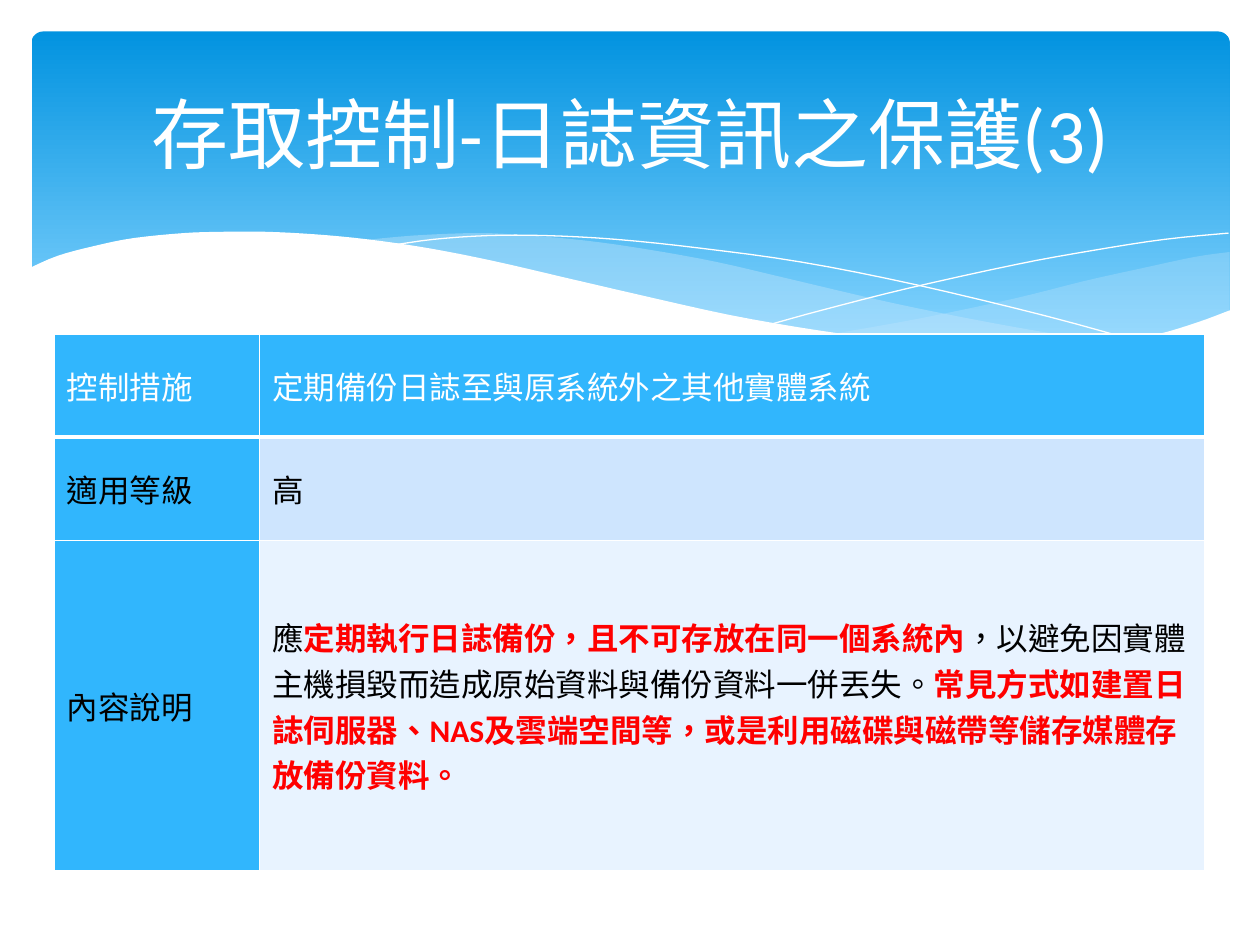
from pptx import Presentation
from pptx.dml.color import RGBColor
from pptx.enum.shapes import MSO_SHAPE as SHAPE
from pptx.enum.text import MSO_ANCHOR as ANCHOR, PP_ALIGN as ALIGN
from pptx.oxml import parse_xml
from pptx.oxml.ns import nsdecls
from pptx.util import Inches, Pt
from lxml import etree

FONT = "Calibri"
WHITE, BLACK, RED = "FFFFFF", "000000", "FF0000"
ACCENT, PALE, PALER, MIST = "31B6FD", "CEE5FE", "E8F3FF", "C6E7FC"

# Content: a cell is a list of (text, colour, bold) runs
TITLE = "存取控制-日誌資訊之保護(3)"
ROWS = [
    ([("控制措施", WHITE, False)],
     [("定期備份日誌至與原系統外之其他實體系統", WHITE, False)]),
    ([("適用等級", BLACK, False)], [("高", BLACK, False)]),
    ([("內容說明", BLACK, False)],
     [("應", BLACK, False),
      ("定期執行日誌備份，且不可存放在同一個系統內", RED, True),
      ("，以避免因實體主機損毀而造成原始資料與備份資料一併丟失。", BLACK, False),
      ("常見方式如建置日誌伺服器、NAS及雲端空間等，或是利用磁碟與磁帶等儲存媒體存放備份資料。",
       RED, True)]),
]
COL_WIDTHS = [1.63, 7.5]
ROW_HEIGHTS = [0.82, 0.82, 2.62]
ROW_FILLS = [ACCENT, PALE, PALER]

# Waves: (fill, opacity %, curves); the curves are joined by straight lines
WAVES = [
    (MIST, 29, [
        [(9.76, 2), (9.48, 2.04), (9.06, 2.13), (8.61, 2.23), (8.05, 2.37),
         (7.29, 2.53), (6.61, 2.65)],
        [(6.61, 2.65), (7.05, 2.71), (7.57, 2.76), (8.03, 2.78), (8.44, 2.77),
         (8.81, 2.73), (9.13, 2.67), (9.42, 2.59), (9.76, 2.47)]]),
    (MIST, 40, [
        [(8.93, 2.73), (8.37, 2.65), (7.75, 2.54), (7.06, 2.4), (6.29, 2.22),
         (5.69, 2.08), (5.14, 1.98), (4.65, 1.91), (4.2, 1.87), (3.8, 1.85),
         (3.28, 1.87), (2.86, 1.91)],
        [(2.86, 1.91), (3.42, 1.99), (4.04, 2.11), (4.49, 2.22), (5.3, 2.4),
         (6.01, 2.55), (6.65, 2.66), (7.22, 2.74), (7.73, 2.77), (8.18, 2.78),
         (8.57, 2.77), (8.93, 2.73)]]),
    (None, 100, [
        [(3.09, 1.95), (3.44, 1.9), (3.87, 1.87), (4.33, 1.87), (4.89, 1.9),
         (5.56, 1.97), (6.36, 2.08), (7.27, 2.26), (8.31, 2.51), (9.07, 2.72)]]),
    (None, 100, [
        [(6.13, 2.57), (6.53, 2.46), (7.2, 2.29), (8.06, 2.1), (8.66, 1.99),
         (9.24, 1.9), (9.75, 1.85)]]),
    (WHITE, 100, [
        [(9.77, 2.46), (9.5, 2.56), (9.2, 2.65), (8.87, 2.71), (8.5, 2.75),
         (8.09, 2.77), (7.61, 2.75), (7.08, 2.7), (6.48, 2.62), (5.79, 2.5),
         (5.03, 2.33), (4.47, 2.2), (3.91, 2.07), (3.4, 1.97), (2.92, 1.9),
         (2.5, 1.86), (2.11, 1.84), (1.77, 1.84), (1.46, 1.85), (1.06, 1.89),
         (0.76, 1.95), (0.46, 2.03), (0.23, 2.13)],
        [(0.23, 3.29), (9.77, 3.29)]]),
]


def rgb(color):
    return RGBColor.from_string(color)


def smooth(points, steps=4):
    """Catmull-Rom curve through the points."""
    padded = [points[0], *points, points[-1]]
    curve = [points[0]]
    for a, b, c, d in zip(padded, padded[1:], padded[2:], padded[3:]):
        for i in range(1, steps + 1):
            t = i / steps
            curve.append(tuple(
                (2 * q + (r - p) * t + (2 * p - 5 * q + 4 * r - s) * t ** 2
                 + (3 * q - p - 3 * r + s) * t ** 3) / 2
                for p, q, r, s in zip(a, b, c, d)))
    return curve


def add_wave(shapes, color, opacity, curves):
    points = [(Inches(x), Inches(y)) for curve in curves for x, y in smooth(curve)]
    builder = shapes.build_freeform(*points[0])
    builder.add_line_segments(points[1:], close=color is not None)
    sp = builder.convert_to_shape()
    sp.shadow.inherit = False
    if color is None:
        sp.fill.background()
        sp.line.color.rgb = rgb(WHITE)
        sp.line.width = Pt(0)
        return
    sp.line.fill.background()
    sp.fill.solid()
    sp.fill.fore_color.rgb = rgb(color)
    if opacity < 100:
        clr = sp.fill._xPr.find(".//{*}srgbClr")
        etree.SubElement(clr, clr.tag.replace("srgbClr", "alpha"), val=str(opacity * 1000))


def add_run(p, text, size, color, bold=False):
    r = p.add_run()
    r.text = text
    r.font.name, r.font.size, r.font.bold = FONT, Pt(size), bold
    r.font.color.rgb = rgb(color)
    r._r.get_or_add_rPr().set("lang", "zh-TW")


def set_borders(cell, top, bottom):
    tcPr = cell._tc.get_or_add_tcPr()
    for side, width in (("L", 1), ("R", 1), ("T", top), ("B", bottom)):
        tcPr.append(parse_xml(
            f'<a:ln{side} {nsdecls("a")} w="{Pt(width)}"><a:solidFill>'
            f'<a:srgbClr val="{WHITE}"/></a:solidFill></a:ln{side}>'))


prs = Presentation()
prs.slide_width, prs.slide_height = Inches(10), Inches(7.5)
shapes = prs.slides.add_slide(prs.slide_layouts[6]).shapes

# Gradient banner
banner = shapes.add_shape(SHAPE.ROUNDED_RECTANGLE, Inches(0.25), Inches(0.25),
                          Inches(9.51), Inches(2.7))
banner.adjustments[0] = 0.034
banner.shadow.inherit = False
banner.line.fill.background()
banner.fill.gradient()
banner.fill.gradient_angle = 270
for stop, (position, color) in zip(banner.fill.gradient_stops,
                                   [(0, "0293E0"), (0.9, "83D3FE")]):
    stop.position = position
    stop.color.rgb = rgb(color)

for wave in WAVES:
    add_wave(shapes, *wave)

# Title
tf = shapes.add_textbox(Inches(0.5), Inches(0.37), Inches(9), Inches(1.37)).text_frame
tf.word_wrap = True
tf.vertical_anchor = ANCHOR.MIDDLE
tf.paragraphs[0].alignment = ALIGN.CENTER
add_run(tf.paragraphs[0], TITLE, 44, WHITE)

# Control table
table = shapes.add_table(len(ROWS), len(COL_WIDTHS), Inches(0.43), Inches(2.65),
                         Inches(sum(COL_WIDTHS)), Inches(sum(ROW_HEIGHTS))).table
for column, width in zip(table.columns, COL_WIDTHS):
    column.width = Inches(width)
for i, row in enumerate(ROWS):
    table.rows[i].height = Inches(ROW_HEIGHTS[i])
    for j, runs in enumerate(row):
        cell = table.cell(i, j)
        cell.vertical_anchor = ANCHOR.MIDDLE
        set_borders(cell, top=3 if i == 1 else 1, bottom=3 if i == 0 else 1)
        cell.fill.solid()
        cell.fill.fore_color.rgb = rgb(ACCENT if j == 0 else ROW_FILLS[i])
        for text, color, bold in runs:
            add_run(cell.text_frame.paragraphs[0], text, 18, color, bold)

prs.save("out.pptx")
